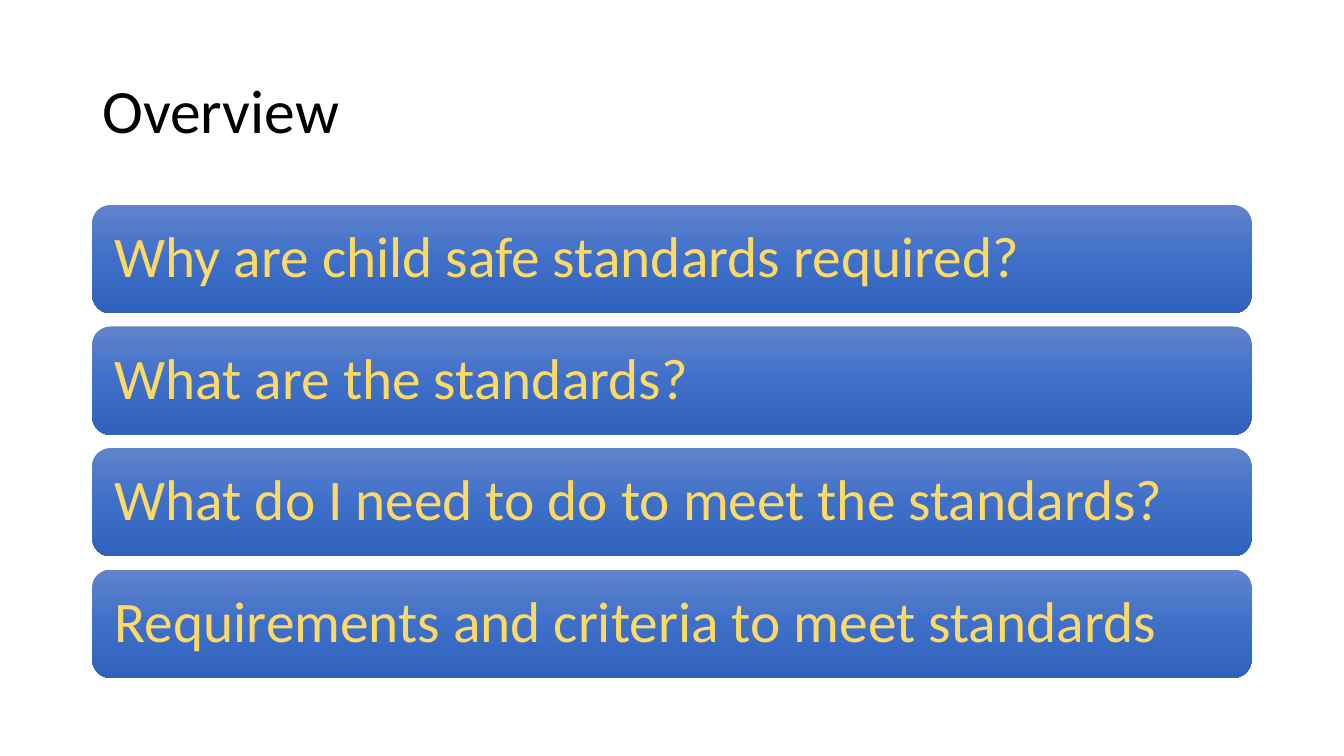
from copy import deepcopy

from pptx import Presentation
from pptx import util as u
from pptx.dml import color
from pptx.enum import shapes, text

FONT = "Calibri"
TITLE_COLOR = "000000"
BAR_TEXT_COLOR = "FFD966"
BAR_GRADIENT = [(0, "6183CB"), (0.5, "3E70CA"), (1, "3062BB")]
TOPICS = [
    "Why are child safe standards required?",
    "What are the standards?",
    "What do I need to do to meet the standards?",
    "Requirements and criteria to meet standards",
]


def rgb(value):
    return color.RGBColor.from_string(value)


def write_line(shape, words, size, font_color, margins):
    frame = shape.text_frame
    frame.word_wrap = True
    frame.vertical_anchor = text.MSO_ANCHOR.MIDDLE
    frame.margin_left = frame.margin_right = u.Pt(margins[0])
    frame.margin_top = frame.margin_bottom = u.Pt(margins[1])
    paragraph = frame.paragraphs[0]
    paragraph.alignment = text.PP_ALIGN.LEFT
    paragraph.line_spacing = 0.9
    run = paragraph.add_run()
    run.text = words
    run.font.name = FONT
    run.font.size = u.Pt(size)
    run.font.color.rgb = rgb(font_color)


def fill_gradient(shape):
    fill = shape.fill
    fill.gradient()
    fill.gradient_angle = 270
    stop_list = shape._element.spPr.xpath("./a:gradFill/a:gsLst")[0]
    stop_list.append(deepcopy(stop_list[-1]))
    for stop, (position, stop_color) in zip(fill.gradient_stops, BAR_GRADIENT):
        stop.position = position
        stop.color.rgb = rgb(stop_color)


def add_title(slide, left, top, width, height):
    box = slide.shapes.add_textbox(u.Pt(left), u.Pt(top), u.Pt(width), u.Pt(height))
    write_line(box, "Overview", 44, TITLE_COLOR, (7.2, 3.6))


def add_topic_bars(slide, left, top, width, height, gap=9.4):
    bar_height = (height - gap * (len(TOPICS) - 1)) / len(TOPICS)
    for index, topic in enumerate(TOPICS):
        bar_top = top + index * (bar_height + gap)
        bar = slide.shapes.add_shape(
            shapes.MSO_SHAPE.ROUNDED_RECTANGLE,
            u.Pt(left), u.Pt(bar_top), u.Pt(width), u.Pt(bar_height))
        bar.shadow.inherit = False
        bar.line.fill.background()
        fill_gradient(bar)
        write_line(bar, topic, 41, BAR_TEXT_COLOR, (12.2, 12))


def main():
    presentation = Presentation()
    presentation.slide_width = u.Pt(960)
    presentation.slide_height = u.Pt(540)
    slide = presentation.slides.add_slide(presentation.slide_layouts[6])
    add_title(slide, 66, 28.75, 828, 104.4)
    add_topic_bars(slide, 66, 146.4, 828, 337.8)
    presentation.save("out.pptx")


if __name__ == "__main__":
    main()
